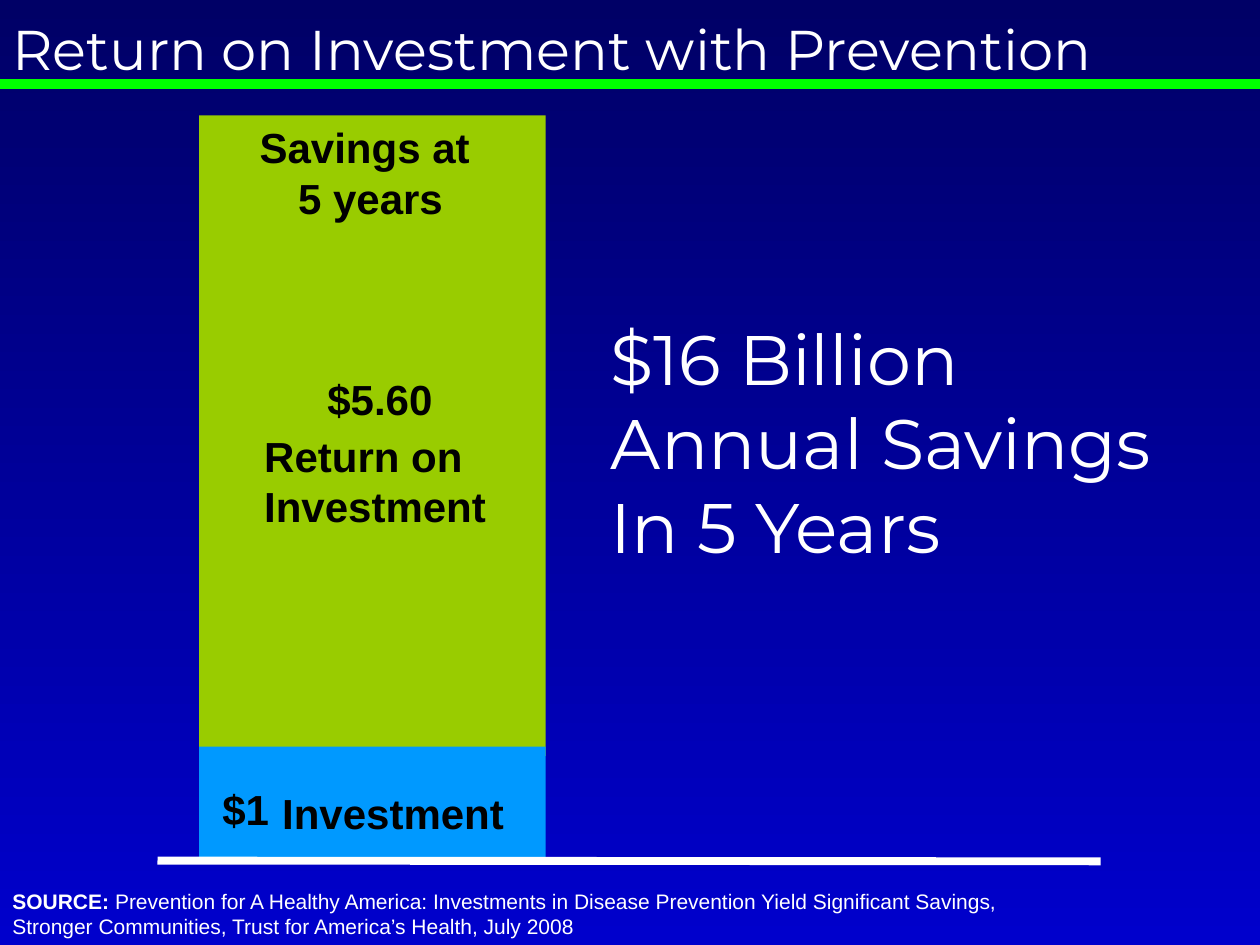
from lxml import etree
from pptx import Presentation
from pptx.dml.color import RGBColor
from pptx.enum.shapes import MSO_CONNECTOR as CONN, MSO_SHAPE as SHAPE
from pptx.enum.text import MSO_AUTO_SIZE as AUTO, PP_ALIGN as ALIGN
from pptx.oxml.ns import qn
from pptx.util import Pt

WHITE, BLACK = "FFFFFF", "000000"
BAR_LEFT, BAR_WIDTH = 113.76, 198


def color(hex_code):
    return RGBColor.from_string(hex_code)


def set_background(s, top, bottom):
    fill = s.background.fill
    fill.gradient()
    fill.gradient_angle = 270
    for stop, position, hex_code in zip(fill.gradient_stops, (0, 1), (top, bottom)):
        stop.position = position
        stop.color.rgb = color(hex_code)


def add_bar(s, top, height, fill):
    sp = s.shapes.add_shape(SHAPE.RECTANGLE, Pt(BAR_LEFT), Pt(top), Pt(BAR_WIDTH), Pt(height))
    sp.shadow.inherit = False
    sp.fill.solid()
    sp.fill.fore_color.rgb = color(fill)
    sp.line.fill.background()


def add_line(s, x1, y1, x2, y2, hex_code, width):
    line = s.shapes.add_connector(CONN.STRAIGHT, Pt(x1), Pt(y1), Pt(x2), Pt(y2))
    line.line.color.rgb = color(hex_code)
    line.line.width = Pt(width)
    etree.SubElement(line._element.spPr, qn("a:effectLst"))


def add_text(s, box, paragraphs, size, font="Arial", hex_code=BLACK,
             align=ALIGN.LEFT, wrap=True, inset=True):
    """Add a text box; each paragraph is a list of (text, bold) runs."""
    tf = s.shapes.add_textbox(*map(Pt, box)).text_frame
    tf.word_wrap = wrap
    tf.auto_size = AUTO.SHAPE_TO_FIT_TEXT
    if not inset:
        tf.margin_left = tf.margin_top = tf.margin_right = tf.margin_bottom = 0
    for i, runs in enumerate(paragraphs):
        p = tf.add_paragraph() if i else tf.paragraphs[0]
        p.alignment = align
        for text, bold in runs:
            r = p.add_run()
            r.text = text
            r.font.name = font
            r.font.size = Pt(size)
            r.font.bold = bold
            r.font.color.rgb = color(hex_code)


def add_heading(s, box, lines, size, wrap=True):
    add_text(s, box, [[(line, False)] for line in lines], size, "Montserrat", WHITE, wrap=wrap)


def add_label(s, box, *lines, **options):
    add_text(s, box, [[(line, True)] for line in lines], 24, **options)


def main():
    prs = Presentation()
    prs.slide_width, prs.slide_height = Pt(720), Pt(540)
    s = prs.slides.add_slide(prs.slide_layouts[6])
    set_background(s, "000066", "0000CC")

    add_bar(s, 66, 366, "99CC00")
    add_bar(s, 426.7, 65.5, "0099FF")
    add_label(s, (120, 444, 41, 36), "$1", wrap=False)
    add_heading(s, (0, 4.5, 720, 45.5), ["Return on Investment with Prevention"], 32)
    add_line(s, 0, 48, 720, 48, "00FF00", 6)
    add_line(s, 90, 491.8, 629, 492.2, WHITE, 4.5)

    add_label(s, (161.3, 450, 183, 29), "Investment", inset=False)
    add_text(s, (0, 504, 612, 36), [[
        ("SOURCE: ", True),
        ("Prevention for A Healthy America: Investments in Disease Prevention Yield "
         "Significant Savings, Stronger Communities, Trust for America’s Health, July 2008", False),
    ]], 12, hex_code=WHITE)
    add_label(s, (180, 210, 75, 36), "$5.60", wrap=False)
    add_label(s, (151, 246, 155, 58), "Return on Investment", inset=False)
    add_label(s, (140.4, 66, 142.6, 65.5), "Savings at ", "5 years", align=ALIGN.CENTER, wrap=False)
    add_heading(s, (342, 177, 350, 151), ["$16 Billion", "Annual Savings", "In 5 Years"], 40, wrap=False)

    prs.save("out.pptx")


if __name__ == "__main__":
    main()
